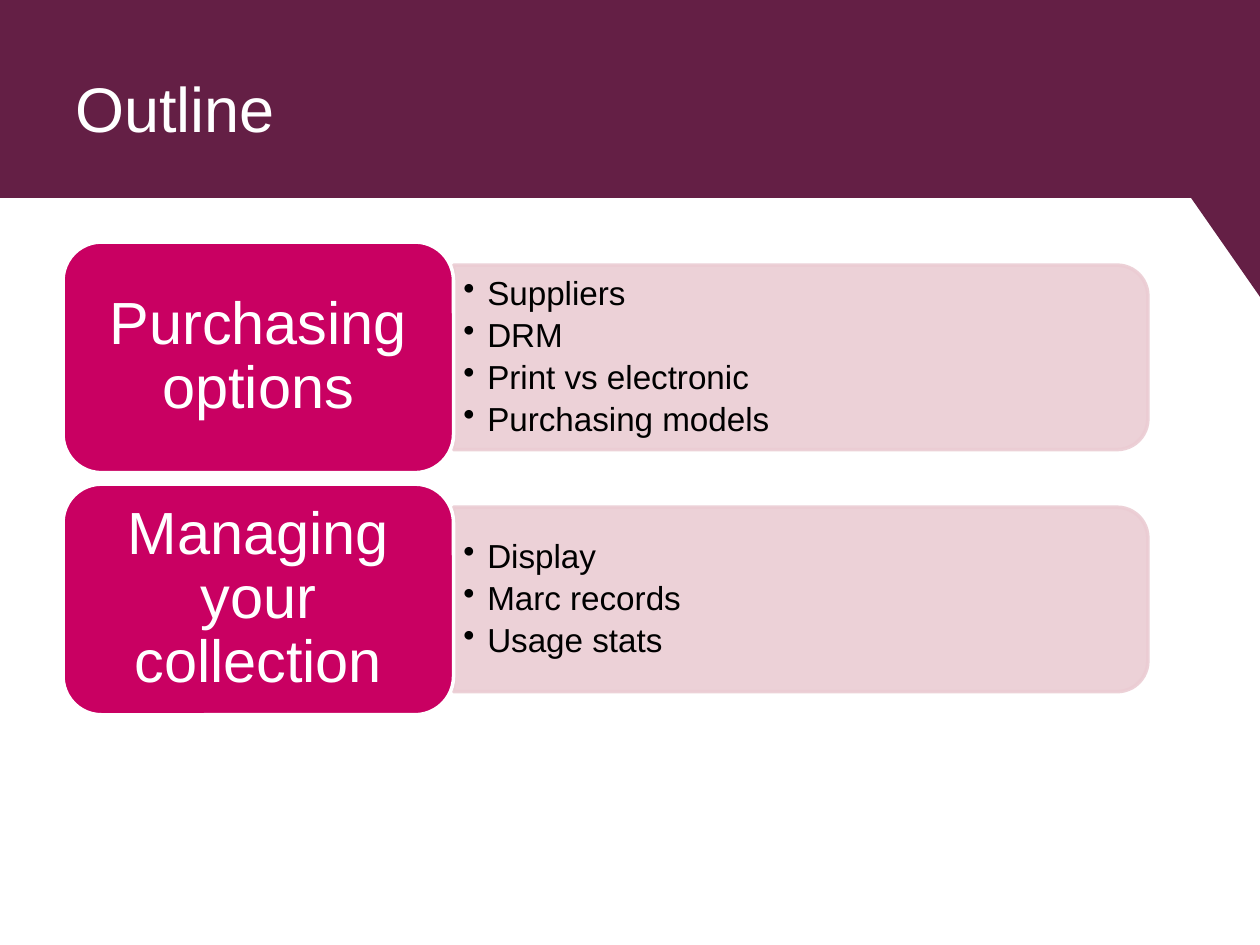
from lxml.etree import SubElement
from pptx import Presentation
from pptx.dml.color import RGBColor
from pptx.enum.shapes import MSO_SHAPE
from pptx.enum.text import MSO_ANCHOR, PP_ALIGN
from pptx.oxml.ns import qn
from pptx.util import Cm, Pt

PLUM = RGBColor(0x64, 0x1F, 0x45)
MAGENTA = RGBColor(0xC9, 0x00, 0x62)
PINK = RGBColor(0xEB, 0xCC, 0xD3)
WHITE = RGBColor(0xFF, 0xFF, 0xFF)
BLACK = RGBColor(0x00, 0x00, 0x00)

SECTIONS = [
    ("Purchasing options",
     ["Suppliers", "DRM", "Print vs electronic", "Purchasing models"]),
    ("Managing your collection", ["Display", "Marc records", "Usage stats"]),
]


def add_filled_shape(slide, kind, left, top, width, height, color, line_color=None):
    shape = slide.shapes.add_shape(kind, Cm(left), Cm(top), Cm(width), Cm(height))
    shape.shadow.inherit = False
    shape.fill.solid()
    shape.fill.fore_color.rgb = color
    if line_color is None:
        shape.line.fill.background()
    else:
        shape.line.color.rgb = line_color
        shape.line.width = Pt(2)
    return shape


def set_frame(frame, horizontal, vertical):
    frame.word_wrap = True
    frame.vertical_anchor = MSO_ANCHOR.MIDDLE
    frame.margin_left = frame.margin_right = Cm(horizontal)
    frame.margin_top = frame.margin_bottom = Cm(vertical)


def set_font(paragraph, size, color):
    paragraph.font.name = "Arial"
    paragraph.font.size = Pt(size)
    paragraph.font.color.rgb = color


def add_bullet(paragraph):
    properties = paragraph._p.get_or_add_pPr()
    properties.set("marL", str(Cm(0.48)))
    properties.set("indent", str(-Cm(0.48)))
    SubElement(properties, qn("a:buChar"), char="•")


def make_translucent(shape):
    for color in shape._element.spPr.iter(qn("a:srgbClr")):
        SubElement(color, qn("a:alpha"), val="90000")


def add_header(slide, left, top, width, height):
    add_filled_shape(slide, MSO_SHAPE.RIGHT_TRIANGLE, left + width - 1.78,
                     top + height - 0.56, 1.93, 2.77, PLUM).rotation = 180
    add_filled_shape(slide, MSO_SHAPE.RECTANGLE, left, top, width, height, PLUM)
    title = slide.shapes.add_textbox(
        Cm(left + 1.27), Cm(top + 0.58), Cm(width - 2.54), Cm(3.18))
    set_frame(title.text_frame, 0.25, 0.13)
    paragraph = title.text_frame.paragraphs[0]
    paragraph.text = "Outline"
    set_font(paragraph, 36, WHITE)


def add_panel(slide, left, top, width, height, items):
    panel = add_filled_shape(
        slide, MSO_SHAPE.ROUND_2_SAME_RECTANGLE,
        left + (width - height) / 2, top + (height - width) / 2,
        height, width, PINK, PINK)
    panel.rotation = 90
    make_translucent(panel)
    box = slide.shapes.add_textbox(
        Cm(left), Cm(top + 0.18), Cm(width - 0.18), Cm(height - 0.36))
    frame = box.text_frame
    set_frame(frame, 0.2, 0.1)
    for index, item in enumerate(items):
        paragraph = frame.add_paragraph() if index else frame.paragraphs[0]
        paragraph.text = item
        paragraph.line_spacing = 0.9
        paragraph.space_after = Pt(3.5)
        add_bullet(paragraph)
        set_font(paragraph, 19, BLACK)


def add_section(slide, left, top, width, height, heading, items):
    label_width = 0.36 * width
    add_panel(slide, left + label_width, top + 0.1 * height,
              width - label_width, 0.8 * height, items)
    label = add_filled_shape(slide, MSO_SHAPE.ROUNDED_RECTANGLE,
                             left, top, label_width, height, MAGENTA, WHITE)
    set_frame(label.text_frame, 0.36, 0.18)
    paragraph = label.text_frame.paragraphs[0]
    paragraph.text = heading
    paragraph.alignment = PP_ALIGN.CENTER
    paragraph.line_spacing = 0.9
    set_font(paragraph, 34, WHITE)


def main():
    presentation = Presentation()
    presentation.slide_width = Cm(25.4)
    presentation.slide_height = Cm(19.05)
    slide = presentation.slides.add_slide(presentation.slide_layouts[6])
    add_header(slide, 0, 0, 25.4, 3.99)
    for index, (heading, items) in enumerate(SECTIONS):
        add_section(slide, 1.27, 4.88 + 4.88 * index, 21.87, 4.65, heading, items)
    presentation.save("out.pptx")


if __name__ == "__main__":
    main()
